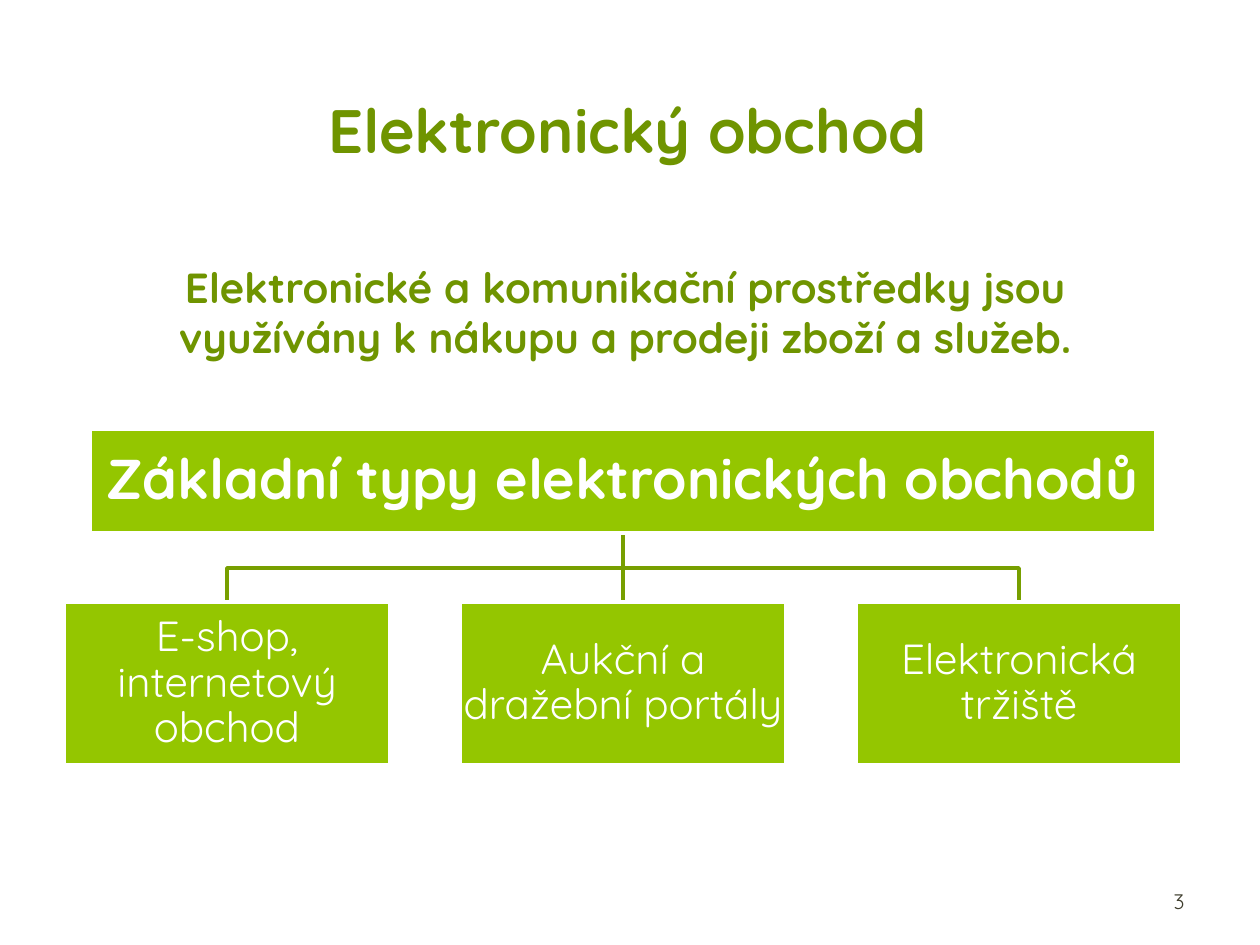
from pptx import Presentation
from pptx.dml.color import RGBColor
from pptx.enum.shapes import MSO_CONNECTOR, MSO_SHAPE
from pptx.enum.text import MSO_ANCHOR, MSO_AUTO_SIZE, PP_ALIGN
from pptx.oxml.ns import qn
from pptx.util import Pt
from lxml import etree

RECT, LINE = MSO_SHAPE.RECTANGLE, MSO_CONNECTOR.STRAIGHT
MID, TOP = MSO_ANCHOR.MIDDLE, MSO_ANCHOR.TOP
LEFT_RIGHT = ("margin_left", "margin_right", "margin_top", "margin_bottom")
CENTER, RIGHT = PP_ALIGN.CENTER, PP_ALIGN.RIGHT
NO_FIT = MSO_AUTO_SIZE.NONE

FONT = "Quicksand"
GREEN, DARK, EDGE = "94C600", "6F9400", "779F00"
WHITE, GREY = "FFFFFF", "3E3D2D"

TITLE = "Elektronický obchod"
INTRO = ("Elektronické a komunikační prostředky jsou "
         "využívány k nákupu a prodeji zboží a služeb.")
ROOT = "Základní typy elektronických obchodů"
TYPES = ["E-shop, internetový obchod", "Aukční a dražební portály",
         "Elektronická tržiště"]
NUMBER = "3"

# Lengths in px, 126 to the inch
SCALE = 914400 / 126
ROOT_BOX = (90, 429, 1066, 104)
TYPE_X, TYPE_Y, TYPE_W, TYPE_H = 64, 602, 326, 163
STEP = 396


def px(n):
    return round(n * SCALE)


def color(code):
    return RGBColor.from_string(code)


def write(frame, text, size, ink, bold=False, align=CENTER, anchor=MID):
    frame.word_wrap = True
    frame.auto_size = NO_FIT
    frame.vertical_anchor = anchor
    par = frame.paragraphs[0]
    par.alignment = align
    run = par.add_run()
    run.text = text
    run.font.name = FONT
    run.font.size = Pt(size)
    run.font.bold = bold
    run.font.color.rgb = color(ink)
    return par


def add_box(slide, area, text, size, bold=False):
    box = slide.shapes.add_shape(RECT, *map(px, area))
    box.shadow.inherit = False
    box.fill.solid()
    box.fill.fore_color.rgb = color(GREEN)
    box.line.color.rgb = color(WHITE)
    box.line.width = Pt(2)
    for side in LEFT_RIGHT:
        setattr(box.text_frame, side, px(2))
    write(box.text_frame, text, size, WHITE, bold).line_spacing = 0.9


def add_link(slide, start, end):
    """Join two points by a straight line, or by a stepped one if they are not in line."""
    (x1, y1), (x2, y2) = start, end
    if x1 == x2:
        link = slide.shapes.add_connector(LINE, *map(px, (x1, y1, x2, y2)))
        etree.SubElement(link.line._get_or_add_ln().getparent(),
                         qn("a:effectLst"))
    else:
        bend = (y1 + y2) / 2
        path = slide.shapes.build_freeform(x1, y1, SCALE)
        path.add_line_segments([(x1, bend), (x2, bend), end], close=False)
        link = path.convert_to_shape()
        link.shadow.inherit = False
        link.fill.background()
    link.line.color.rgb = color(EDGE)
    link.line.width = Pt(2)


def add_text(slide, area, *args, **kind):
    box = slide.shapes.add_textbox(*map(px, area))
    write(box.text_frame, *args, **kind)


def main():
    deck = Presentation()
    deck.slide_width, deck.slide_height = px(1260), px(945)
    slide = deck.slides.add_slide(deck.slide_layouts[5])

    title = slide.shapes.title
    title.left, title.top, title.width, title.height = map(
        px, (59, 57, 1138, 144))
    write(title.text_frame, TITLE, 35, DARK, bold=True)

    left, top, width, height = ROOT_BOX
    start = (left + width / 2, top + height)
    spots = [TYPE_X + i * STEP for i in range(len(TYPES))]
    for x in spots:
        add_link(slide, start, (x + TYPE_W / 2, TYPE_Y))
    add_box(slide, ROOT_BOX, ROOT, 32, bold=True)
    for x, text in zip(spots, TYPES):
        add_box(slide, (x, TYPE_Y, TYPE_W, TYPE_H), text, 24)

    add_text(slide, (94, 255, 1062, 115), INTRO, 24, DARK, bold=True,
             anchor=TOP)
    add_text(slide, (903, 876, 294, 50), NUMBER, 12, GREY, align=RIGHT)
    deck.save("out.pptx")


if __name__ == "__main__":
    main()
